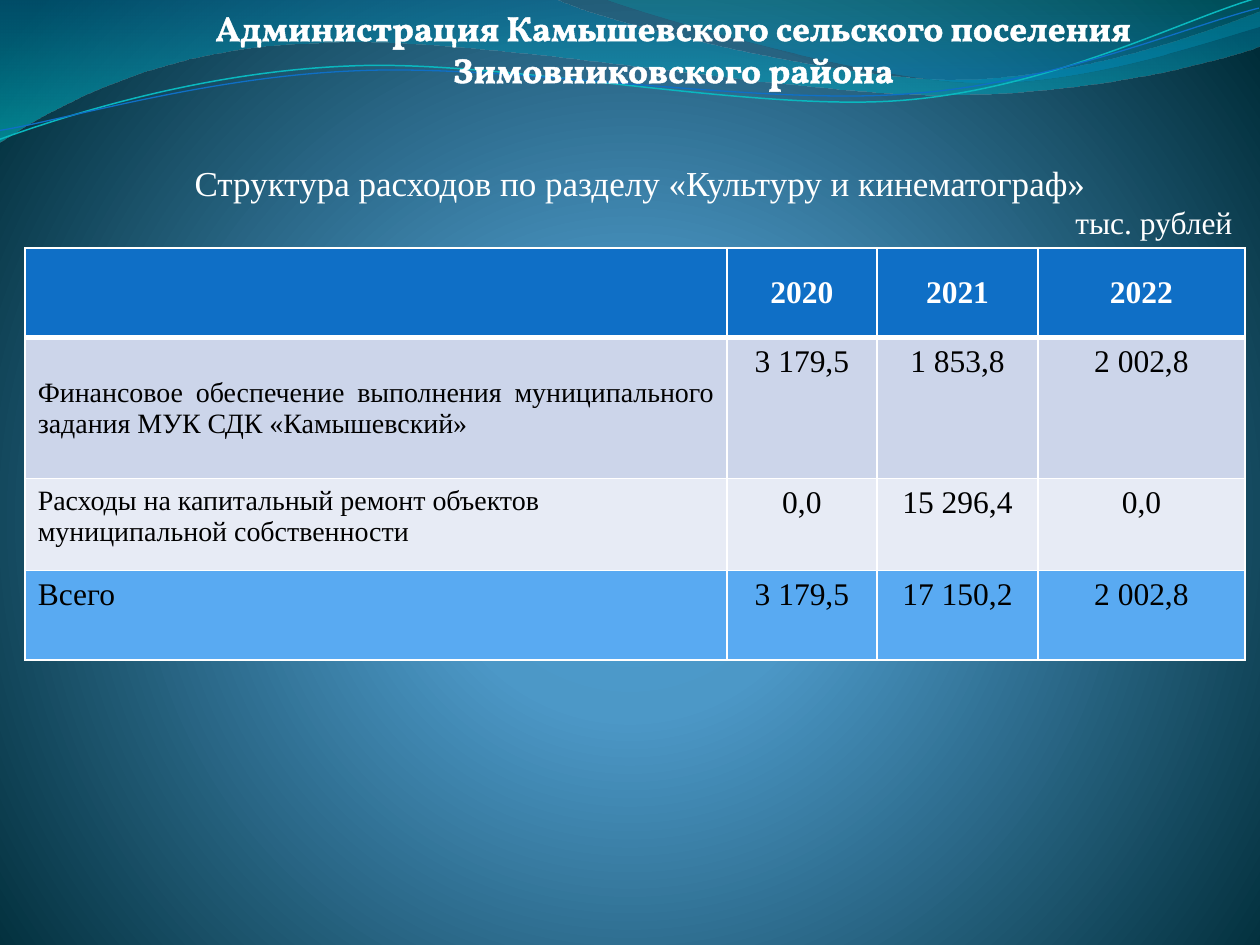
from dataclasses import dataclass
from typing import Optional

import lxml.etree
import pptx
import pptx.dml.color
import pptx.enum.text
import pptx.oxml.ns
import pptx.util

Inches = pptx.util.Inches
Pt = pptx.util.Pt
Align = pptx.enum.text.PP_ALIGN
Anchor = pptx.enum.text.MSO_ANCHOR
qn = pptx.oxml.ns.qn


@dataclass(frozen=True)
class Theme:
    white: str = "FFFFFF"
    black: str = "000000"
    blue: str = "0F6FC6"
    teal: str = "0AB8BF"
    detail_rows: tuple = ("CCD5EA", "E7EBF5")
    total_row: str = "59AAF2"
    body_font: str = "Times New Roman"
    title_font: str = "Vollkorn"
    heading_size: int = 20
    value_size: int = 18
    label_size: int = 16


THEME = Theme()


@dataclass(frozen=True)
class Stop:
    position: int
    color: str
    opacity: int = 100


@dataclass(frozen=True)
class Wave:
    start: tuple
    segments: tuple
    stops: tuple = ()
    line_color: Optional[str] = None
    line_width: float = 0
    rotation: float = 0


@dataclass(frozen=True)
class Line:
    text: str
    size: int
    alignment: Align = Align.CENTER
    font: str = THEME.body_font
    color: str = THEME.white
    bold: bool = False


@dataclass(frozen=True)
class Row:
    height: float
    fill: str
    label: Line
    values: tuple
    label_anchor: Anchor = Anchor.TOP
    value_anchor: Anchor = Anchor.TOP
    header: bool = False


WAVES = (
    Wave((0, 0), (
        (4.4, -0.01), (4.76, 0.17, 6.64, 0.63, 7.58, 0.63),
        (8.53, 0.63, 9.58, 0.26, 10, 0.09), (10.01, 0.36),
        (9.83, 0.44, 8.7, 0.76, 7.46, 0.75), (6.22, 0.75, 3.82, 0.28, 2.57, 0.34),
        (1.29, 0.36, 0.46, 0.83, -0.01, 1.13), (0, 0)),
        stops=(Stop(0, "0074A1", 45), Stop(100, "00C6CF", 55))),
    Wave((4.79, -0.01), (
        (5.09, 0.11, 6.82, 0.62, 7.69, 0.65), (8.56, 0.69, 9.61, 0.32, 10, 0.21),
        (10, 0), (4.79, -0.01)),
        stops=(Stop(0, "00A1A9", 30), Stop(80, "008BBF", 45))),
    Wave((-0.02, 0.87), (
        (0.47, 0.72, 1.58, 0.41, 2.78, 0.42), (3.96, 0.42, 5.91, 0.93, 7.12, 0.9),
        (8.32, 0.87, 9.4, 0.36, 10, 0.22)),
        line_color=THEME.teal, line_width=0.85, rotation=357.3),
    Wave((-0.02, 0.8), (
        (0.46, 0.75, 1.64, 0.45, 2.83, 0.46), (4.03, 0.46, 5.96, 0.88, 7.16, 0.85),
        (8.35, 0.83, 9.42, 0.42, 10.01, 0.3)),
        line_color=THEME.blue, line_width=0.75, rotation=357.3),
)

COLUMN_WIDTHS = (5.57, 1.19, 1.28, 1.64)
ROWS = (
    Row(0.71, THEME.blue, Line("", THEME.value_size), ("2020", "2021", "2022"),
        value_anchor=Anchor.MIDDLE, header=True),
    Row(1.12, THEME.detail_rows[0],
        Line("Финансовое обеспечение выполнения муниципального задания МУК СДК «Камышевский»",
             THEME.label_size, Align.JUSTIFY, color=THEME.black),
        ("3 179,5", "1 853,8", "2 002,8"), label_anchor=Anchor.MIDDLE),
    Row(0.73, THEME.detail_rows[1],
        Line("Расходы на капитальный ремонт объектов муниципальной собственности",
             THEME.label_size, Align.LEFT, color=THEME.black),
        ("0,0", "15 296,4", "0,0")),
    Row(0.71, THEME.total_row,
        Line("Всего", THEME.value_size, Align.LEFT, color=THEME.black),
        ("3 179,5", "17 150,2", "2 002,8")),
)


def rgb(color: str) -> pptx.dml.color.RGBColor:
    return pptx.dml.color.RGBColor.from_string(color)


def add_color(parent, color: str, opacity: int = 100) -> None:
    element = lxml.etree.SubElement(parent, qn("a:srgbClr"), val=color)
    if opacity < 100:
        lxml.etree.SubElement(element, qn("a:alpha"), val=str(opacity * 1000))


def set_gradient(owner, stops: tuple, center: Optional[dict] = None) -> None:
    gradient = owner.find(".//" + qn("a:gradFill"))
    for child in list(gradient):
        gradient.remove(child)
    stop_list = lxml.etree.SubElement(gradient, qn("a:gsLst"))
    for stop in stops:
        element = lxml.etree.SubElement(stop_list, qn("a:gs"), pos=str(stop.position * 1000))
        add_color(element, stop.color, stop.opacity)
    if center:
        shade = lxml.etree.SubElement(gradient, qn("a:path"), {"path": "circle"})
        lxml.etree.SubElement(shade, qn("a:fillToRect"), center)
    else:
        lxml.etree.SubElement(gradient, qn("a:lin"), ang="5400000", scaled="1")


def make_line(tag: str, color: str, width: float):
    line = lxml.etree.Element(qn(tag), w=str(Pt(width)))
    add_color(lxml.etree.SubElement(line, qn("a:solidFill")), color)
    return line


def bend_segments(shape, segments: tuple) -> None:
    outline = shape.element.find(".//" + qn("a:path"))
    legs = iter(outline.findall(qn("a:lnTo")))
    for segment in segments:
        segment_legs = [next(legs) for _ in range(len(segment) // 2)]
        if len(segment_legs) == 3:
            curve = lxml.etree.Element(qn("a:cubicBezTo"))
            segment_legs[0].addprevious(curve)
            for leg in segment_legs:
                curve.append(leg[0])
                outline.remove(leg)


def draw_wave(slide, wave: Wave) -> None:
    points = [(Inches(segment[index]), Inches(segment[index + 1]))
              for segment in wave.segments for index in range(0, len(segment), 2)]
    builder = slide.shapes.build_freeform(*map(Inches, wave.start))
    builder.add_line_segments(points, close=bool(wave.stops))
    shape = builder.convert_to_shape()
    bend_segments(shape, wave.segments)
    shape.rotation = wave.rotation
    shape.shadow.inherit = False
    if wave.stops:
        shape.fill.gradient()
        set_gradient(shape.element, wave.stops)
        shape.line.fill.background()
    else:
        shape.fill.background()
        shape.line.color.rgb = rgb(wave.line_color)
        shape.line.width = Pt(wave.line_width)


def write_line(paragraph, line: Line) -> None:
    if line.text:
        paragraph.text = line.text
    paragraph.alignment = line.alignment
    paragraph.font.name = line.font
    paragraph.font.size = Pt(line.size)
    paragraph.font.bold = line.bold
    paragraph.font.color.rgb = rgb(line.color)


def draw_text(slide, left: float, top: float, width: float, height: float, lines: tuple):
    box = slide.shapes.add_textbox(Inches(left), Inches(top), Inches(width), Inches(height))
    frame = box.text_frame
    frame.word_wrap = True
    frame.auto_size = pptx.enum.text.MSO_AUTO_SIZE.SHAPE_TO_FIT_TEXT
    for index, line in enumerate(lines):
        write_line(frame.add_paragraph() if index else frame.paragraphs[0], line)
    return frame


def draw_table(slide, left: float, top: float) -> None:
    frame = slide.shapes.add_table(
        len(ROWS), len(COLUMN_WIDTHS), Inches(left), Inches(top),
        Inches(sum(COLUMN_WIDTHS)), Inches(sum(row.height for row in ROWS)))
    table = frame.table
    table.first_row = table.horz_banding = False
    for column, width in zip(table.columns, COLUMN_WIDTHS):
        column.width = Inches(width)
    for row_index, row in enumerate(ROWS):
        table.rows[row_index].height = Inches(row.height)
        color = THEME.white if row.header else THEME.black
        values = [Line(value, THEME.value_size, color=color, bold=row.header)
                  for value in row.values]
        below_header = row_index > 0 and ROWS[row_index - 1].header
        borders = {"a:lnL": 1, "a:lnR": 1, "a:lnT": 3 if below_header else 1,
                   "a:lnB": 3 if row.header else 1}
        for column_index, line in enumerate([row.label, *values]):
            cell = table.cell(row_index, column_index)
            cell.fill.solid()
            cell.fill.fore_color.rgb = rgb(row.fill)
            cell.vertical_anchor = row.value_anchor if column_index else row.label_anchor
            write_line(cell.text_frame.paragraphs[0], line)
            properties = cell._tc.get_or_add_tcPr()
            for position, (tag, width) in enumerate(borders.items()):
                properties.insert(position, make_line(tag, THEME.white, width))


def main() -> None:
    presentation = pptx.Presentation()
    presentation.slide_width, presentation.slide_height = Inches(10), Inches(7.5)
    slide = presentation.slides.add_slide(presentation.slide_layouts[6])
    slide.background.fill.gradient()
    set_gradient(slide.element,
                 (Stop(0, "4AA0D6"), Stop(25, "4C98C7"), Stop(100, "002C38")),
                 {"l": "10000", "t": "110000", "r": "10000", "b": "100000"})
    for wave in WAVES:
        draw_wave(slide, wave)
    draw_table(slide, 0.2, 1.97)
    draw_text(slide, 0.35, 1.23, 9.53, 0.74, (
        Line("Структура расходов по разделу «Культуру и кинематограф» ", THEME.heading_size),
        Line("тыс. рублей", THEME.value_size, Align.RIGHT)))
    title = draw_text(slide, 1.54, 0, 7.61, 0.77, (
        Line("Администрация Камышевского сельского поселения Зимовниковского района",
             THEME.heading_size, font=THEME.title_font, bold=True),))
    title_run = title.paragraphs[0].runs[0]
    title_run._r.get_or_add_rPr().insert(0, make_line("a:ln", THEME.white, 1.45))
    presentation.save("out.pptx")


if __name__ == "__main__":
    main()
